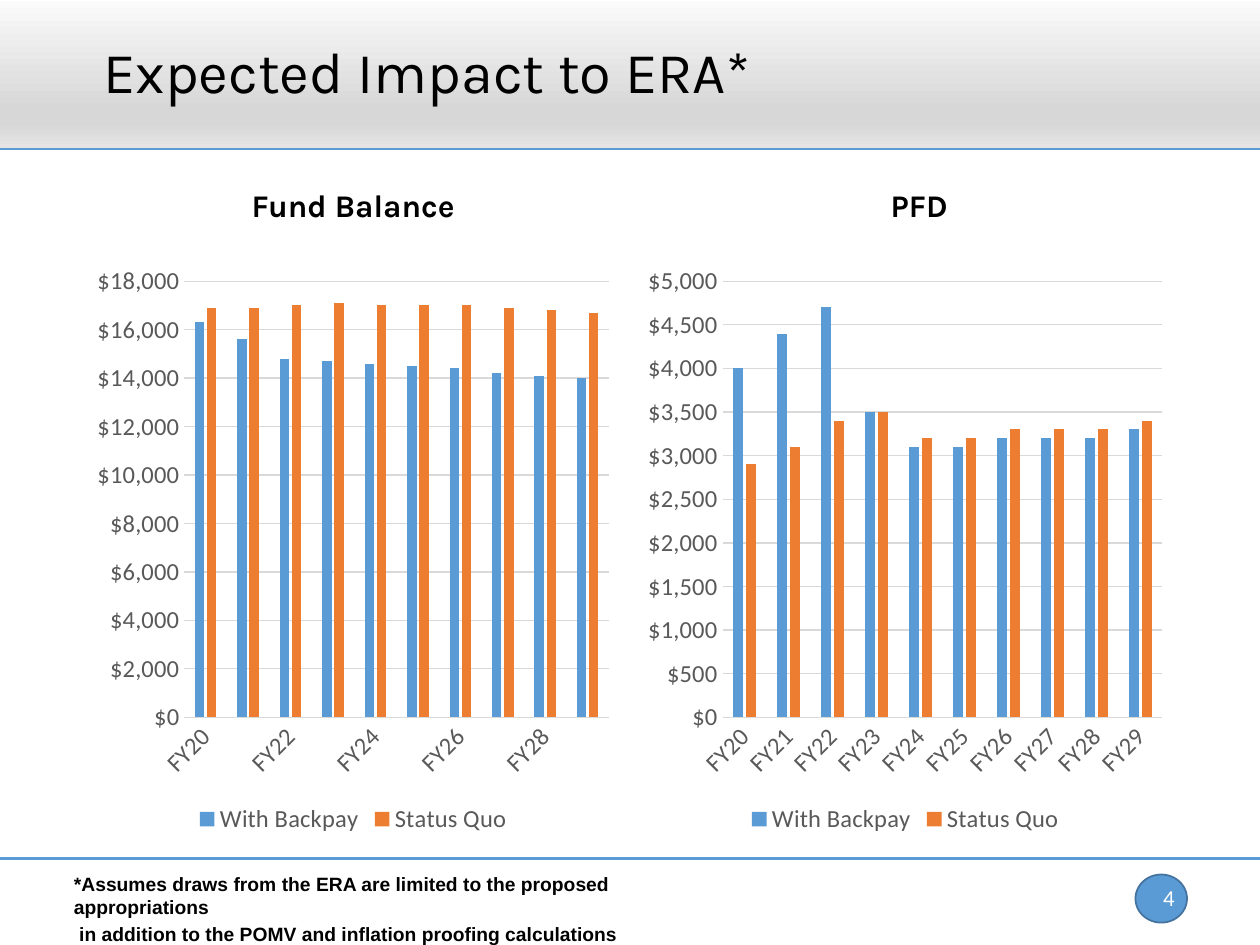
from dataclasses import dataclass

from lxml.etree import SubElement
from pptx import Presentation
from pptx.chart.data import CategoryChartData
from pptx.dml.color import RGBColor
from pptx.enum.chart import XL_CHART_TYPE as ChartType
from pptx.enum.chart import XL_LEGEND_POSITION as LegendPosition
from pptx.enum.chart import XL_TICK_MARK as TickMark
from pptx.enum.shapes import MSO_CONNECTOR as Connector
from pptx.enum.shapes import MSO_SHAPE as Shape
from pptx.enum.text import MSO_ANCHOR as Anchor
from pptx.enum.text import PP_ALIGN as Align
from pptx.oxml.ns import qn
from pptx.slide import Slide
from pptx.util import Cm, Pt


@dataclass(frozen=True)
class Theme:
    blue: str = "5B9BD5"
    dark_blue: str = "43739E"
    orange: str = "ED7D31"
    black: str = "000000"
    white: str = "FFFFFF"
    label_gray: str = "595959"
    grid_gray: str = "D9D9D9"
    banner: tuple = ((0, "FAFAFA"), (74, "D7D7D7"), (83, "D7D7D7"), (100, "E4E4E4"))
    heading_font: str = "Karla"
    chart_font: str = "Calibri"
    note_font: str = "Arial"
    title_size: float = 33
    heading_size: float = 18
    chart_size: float = 14
    number_size: float = 13
    note_size: float = 11


@dataclass(frozen=True)
class Box:
    left: float
    top: float
    width: float
    height: float

    def lengths(self) -> tuple:
        return Cm(self.left), Cm(self.top), Cm(self.width), Cm(self.height)


@dataclass(frozen=True)
class Panel:
    heading: str
    heading_left: float
    chart_left: float
    width: float
    axis_max: int
    axis_step: int
    with_backpay: tuple
    status_quo: tuple


THEME = Theme()
WIDTH, HEIGHT = 25.4, 19.05
YEARS = [f"FY{year}" for year in range(20, 30)]
PANELS = (
    Panel("Fund Balance", 1.75, 1.75, 10.74, 18000, 2000,
          (16300, 15600, 14800, 14700, 14600, 14500, 14400, 14200, 14100, 14000),
          (16900, 16900, 17000, 17100, 17000, 17000, 17000, 16900, 16800, 16700)),
    Panel("PFD", 13.13, 12.85, 10.8, 5000, 500,
          (4000, 4400, 4700, 3500, 3100, 3100, 3200, 3200, 3200, 3300),
          (2900, 3100, 3400, 3500, 3200, 3200, 3300, 3300, 3300, 3400)),
)
FOOTNOTE = (
    "*Assumes draws from the ERA are limited to the proposed appropriations\n"
    " in addition to the POMV and inflation proofing calculations"
)


def rgb(color: str) -> RGBColor:
    return RGBColor.from_string(color)


def add_text(slide: Slide, text: str, box: Box, *, font: str, size: float,
             color: str = THEME.black, bold: bool = False, align: Align = Align.LEFT,
             anchor: Anchor = Anchor.MIDDLE, line_spacing: float = 1.0,
             space_before: float = 0, indent: float = 0) -> None:
    frame = slide.shapes.add_textbox(*box.lengths()).text_frame
    frame.word_wrap = True
    frame.vertical_anchor = anchor
    frame.text = text
    for paragraph in frame.paragraphs:
        paragraph.alignment = align
        paragraph.line_spacing = line_spacing
        paragraph.space_before = Pt(space_before)
        if indent:
            paragraph._p.get_or_add_pPr().set("marL", str(Cm(indent)))
        for run in paragraph.runs:
            run.font.name = font
            run.font.size = Pt(size)
            run.font.bold = bold
            run.font.color.rgb = rgb(color)


def add_banner(slide: Slide, box: Box) -> None:
    banner = slide.shapes.add_shape(Shape.RECTANGLE, *box.lengths())
    banner.shadow.inherit = False
    banner.line.fill.background()
    banner.fill.gradient()
    banner.fill.gradient_angle = 270
    stops = banner._element.spPr.find(f".//{qn('a:gsLst')}")
    for stop in list(stops):
        stops.remove(stop)
    for percent, color in THEME.banner:
        stop = SubElement(stops, qn("a:gs"), pos=str(percent * 1000))
        SubElement(stop, qn("a:srgbClr"), val=color)


def add_rule(slide: Slide, top: float, weight: float) -> None:
    rule = slide.shapes.add_connector(Connector.STRAIGHT, 0, Cm(top), Cm(WIDTH), Cm(top))
    rule.line.color.rgb = rgb(THEME.blue)
    rule.line.width = Pt(weight)
    SubElement(rule._element.spPr, qn("a:effectLst"))


def add_number_badge(slide: Slide, box: Box) -> None:
    badge = slide.shapes.add_shape(Shape.OVAL, *box.lengths())
    badge.shadow.inherit = False
    badge.fill.solid()
    badge.fill.fore_color.rgb = rgb(THEME.blue)
    badge.line.color.rgb = rgb(THEME.dark_blue)
    badge.line.width = Pt(1)


def style_font(font, color: str) -> None:
    font.name = THEME.chart_font
    font.size = Pt(THEME.chart_size)
    font.color.rgb = rgb(color)


def add_panel(slide: Slide, panel: Panel) -> None:
    add_text(slide, panel.heading, Box(panel.heading_left, 3.4, panel.width, 1.24),
             font=THEME.heading_font, size=THEME.heading_size, bold=True,
             align=Align.CENTER, anchor=Anchor.BOTTOM, line_spacing=0.9, space_before=7.5)

    figures = CategoryChartData(number_format='"$"#,##0')
    figures.categories = YEARS
    figures.add_series("With Backpay", panel.with_backpay)
    figures.add_series("Status Quo", panel.status_quo)
    area = Box(panel.chart_left, 5.13, panel.width, 11.79)
    chart = slide.shapes.add_chart(ChartType.COLUMN_CLUSTERED, *area.lengths(), figures).chart
    chart.has_title = False
    style_font(chart.font, THEME.black)
    chart.has_legend = True
    chart.legend.position = LegendPosition.BOTTOM
    chart.legend.include_in_layout = False
    style_font(chart.legend.font, THEME.label_gray)

    plot = chart.plots[0]
    plot.gap_width = 219
    plot.overlap = -27
    plot.vary_by_categories = False
    for series, color in zip(plot.series, (THEME.blue, THEME.orange)):
        series.format.fill.solid()
        series.format.fill.fore_color.rgb = rgb(color)

    years, dollars = chart.category_axis, chart.value_axis
    for axis in (years, dollars):
        axis.major_tick_mark = axis.minor_tick_mark = TickMark.NONE
        style_font(axis.tick_labels.font, THEME.label_gray)
        axis._element.find(f".//{qn('a:bodyPr')}").set("rot", "-60000000")
    dollars.minimum_scale = 0
    dollars.maximum_scale = panel.axis_max
    dollars.major_unit = panel.axis_step
    dollars.tick_labels.number_format = '"$"#,##0'
    dollars.tick_labels.number_format_is_linked = False
    dollars.format.line.fill.background()
    for line in (years.format.line, dollars.major_gridlines.format.line):
        line.color.rgb = rgb(THEME.grid_gray)
        line.width = Pt(0.75)


def main() -> None:
    deck = Presentation()
    deck.slide_width, deck.slide_height = Cm(WIDTH), Cm(HEIGHT)
    slide = deck.slides.add_slide(deck.slide_layouts[6])

    add_number_badge(slide, Box(22.89, 17.63, 1.04, 0.97))
    add_banner(slide, Box(0, 0.03, WIDTH, 2.95))
    add_rule(slide, 3, 1.5)
    add_rule(slide, 17.3, 1.75)
    add_text(slide, "4", Box(18.21, 17.58, 5.72, 1.02), font=THEME.chart_font,
             size=THEME.number_size, color=THEME.white, align=Align.RIGHT)
    add_text(slide, "Expected Impact to ERA*", Box(1.83, 0.08, 23.57, 2.87),
             font=THEME.heading_font, size=THEME.title_size, line_spacing=0.9)
    for panel in PANELS:
        add_panel(slide, panel)
    add_text(slide, FOOTNOTE, Box(0.64, 17.45, 14.58, 1.3), font=THEME.note_font,
             size=THEME.note_size, bold=True, anchor=Anchor.TOP,
             space_before=2.2, indent=0.6)

    deck.save("out.pptx")


if __name__ == "__main__":
    main()
